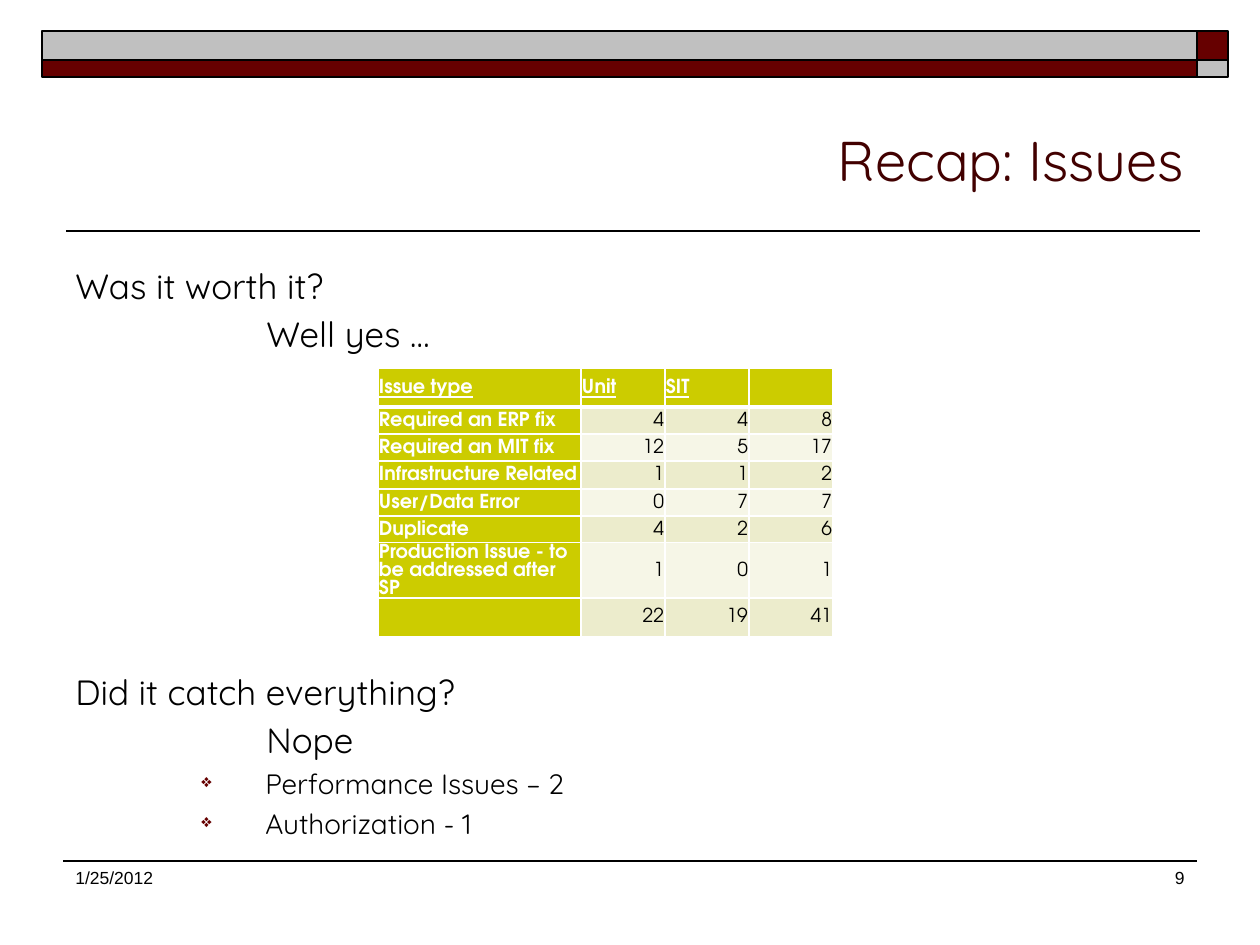
from lxml import etree
from pptx import Presentation
from pptx.dml.color import RGBColor
from pptx.enum.shapes import MSO_CONNECTOR, MSO_SHAPE
from pptx.enum.text import MSO_ANCHOR, PP_ALIGN
from pptx.oxml.ns import qn
from pptx.util import Emu, Pt

LEFT, RIGHT = PP_ALIGN.LEFT, PP_ALIGN.RIGHT
TOP, MIDDLE, BOTTOM = MSO_ANCHOR.TOP, MSO_ANCHOR.MIDDLE, MSO_ANCHOR.BOTTOM
STRAIGHT, RECTANGLE = MSO_CONNECTOR.STRAIGHT, MSO_SHAPE.RECTANGLE

BODY_FONT, TABLE_FONT, FOOTER_FONT = "Quicksand", "TeX Gyre Adventor", "Arial"
BLACK, WHITE, MAROON, SILVER = "000000", "FFFFFF", "660000", "C0C0C0"
TITLE_COLOR, OLIVE = "420000", "CCCC00"
BANDS = ["F6F6E7", "ECECCC"]

COLUMN_WIDTHS = [203, 84, 84, 84]
ROW_HEIGHTS = [28, 27, 27, 28, 27, 27, 55, 27]
ISSUES = [
    ["Issue type", "Unit", "SIT", ""],
    ["Required an ERP fix", "4", "4", "8"],
    ["Required an MIT fix", "12", "5", "17"],
    ["Infrastructure Related", "1", "1", "2"],
    ["User/Data Error", "0", "7", "7"],
    ["Duplicate", "4", "2", "6"],
    ["Production Issue - to be addressed after SP", "1", "0", "1"],
    ["", "22", "19", "41"],
]


def px(length):
    return Emu(round(length * 914400 / 126))


def color(value):
    return RGBColor.from_string(value)


def add_span(para, text, font, size, fill, bold=False, underline=False):
    span = para.add_run()
    span.text = text
    span.font.name = font
    span.font.size = Pt(size)
    span.font.color.rgb = color(fill)
    span.font.bold = bold
    span.font.underline = underline


def add_line(page, x1, y1, x2, y2, width):
    line = page.shapes.add_connector(STRAIGHT, px(x1), px(y1), px(x2), px(y2))
    line.line.color.rgb = color(BLACK)
    line.line.width = Pt(width)
    etree.SubElement(line._element.spPr, qn("a:effectLst"))


def add_bar(page, x, y, width, height, fill):
    bar = page.shapes.add_shape(RECTANGLE, px(x), px(y), px(width), px(height))
    bar.shadow.inherit = False
    bar.fill.solid()
    bar.fill.fore_color.rgb = color(fill)
    bar.line.color.rgb = color(BLACK)
    bar.line.width = Pt(1)


def add_box(page, x, y, width, height):
    box = page.shapes.add_textbox(px(x), px(y), px(width), px(height))
    box.text_frame.word_wrap = True
    box.text_frame.vertical_anchor = TOP
    return box.text_frame


def add_footer(page, x, width, text, align):
    para = add_box(page, x, 861, width, 63).paragraphs[0]
    para.alignment = align
    add_span(para, text, FOOTER_FONT, 10, BLACK)


def indent(para, margin, first_line):
    properties = para._p.get_or_add_pPr()
    properties.set("marL", str(px(margin)))
    properties.set("indent", str(px(first_line)))
    return properties


def add_bullet(properties):
    bullet_color = etree.SubElement(properties, qn("a:buClr"))
    etree.SubElement(bullet_color, qn("a:srgbClr"), val=MAROON)
    etree.SubElement(properties, qn("a:buSzPct"), val="65000")
    etree.SubElement(properties, qn("a:buChar"), char="❖")


def add_question(page, y, height, question, answer, points=()):
    frame = add_box(page, 63, y, 1134, height)
    add_span(frame.paragraphs[0], question, BODY_FONT, 20, BLACK)
    for index, text in enumerate([answer, *points]):
        para = frame.add_paragraph()
        para.space_before = Pt(3.5)
        if index == 0:
            indent(para, 191, 0)
            add_span(para, text, BODY_FONT, 20, BLACK)
        else:
            add_bullet(indent(para, 190, -64))
            add_span(para, text, BODY_FONT, 16, BLACK)


def add_borders(cell, bottom, top):
    properties = cell._tc.get_or_add_tcPr()
    for side, width in (("L", 1), ("R", 1), ("T", top), ("B", bottom)):
        border = etree.SubElement(properties, qn(f"a:ln{side}"), w=str(Pt(width)))
        fill = etree.SubElement(border, qn("a:solidFill"))
        etree.SubElement(fill, qn("a:srgbClr"), val=WHITE)


def fill_cell(cell, text, row, column):
    is_header, is_label = row == 0, row == 0 or column == 0
    add_borders(cell, bottom=3 if is_header else 1, top=3 if row == 1 else 1)
    cell.fill.solid()
    cell.fill.fore_color.rgb = color(OLIVE if is_label else BANDS[row % 2])
    cell.vertical_anchor = MIDDLE
    cell.margin_left = cell.margin_right = cell.margin_top = px(1)
    cell.margin_bottom = 0
    para = cell.text_frame.paragraphs[0]
    para.alignment = LEFT if is_label else RIGHT
    para.line_spacing = Pt(10.3)
    if text:
        add_span(para, text, TABLE_FONT, 11, WHITE if is_label else BLACK,
                 bold=is_label, underline=is_header)


def add_issue_table(page):
    table = page.shapes.add_table(
        len(ISSUES), len(COLUMN_WIDTHS), px(378), px(368),
        px(sum(COLUMN_WIDTHS)), px(sum(ROW_HEIGHTS))).table
    for column, width in zip(table.columns, COLUMN_WIDTHS):
        column.width = px(width)
    for row, height in zip(table.rows, ROW_HEIGHTS):
        row.height = px(height)
    for row, texts in enumerate(ISSUES):
        for column, text in enumerate(texts):
            fill_cell(table.cell(row, column), text, row, column)


def set_title(page, text):
    title = page.shapes.title
    title.left, title.top, title.width, title.height = px(63), px(73), px(1134), px(126)
    title.text_frame.vertical_anchor = BOTTOM
    para = title.text_frame.paragraphs[0]
    para.alignment = RIGHT
    add_span(para, text, BODY_FONT, 32, TITLE_COLOR)


def main():
    deck = Presentation()
    deck.slide_width, deck.slide_height = px(1260), px(945)
    page = deck.slides.add_slide(deck.slide_layouts[5])

    # Header bars and rules
    add_line(page, 1200, 231, 66, 231, 1)
    add_bar(page, 1197, 31, 31, 29, MAROON)
    add_bar(page, 42, 31, 1155, 29, SILVER)
    add_bar(page, 42, 60, 1155, 17, MAROON)
    add_bar(page, 1197, 60, 31, 17, SILVER)
    add_line(page, 63, 861, 1197, 861, 0.75)

    # Footer
    add_footer(page, 63, 231, "1/25/2012", LEFT)
    add_footer(page, 935, 262, "9", RIGHT)

    # Title, questions and issue counts
    set_title(page, "Recap: Issues")
    add_question(page, 258, 108, "Was it worth it?", "Well yes …")
    add_question(page, 664, 190, "Did it catch everything?", "Nope",
                 ["Performance Issues – 2", "Authorization - 1"])
    add_issue_table(page)

    deck.save("out.pptx")


if __name__ == "__main__":
    main()
